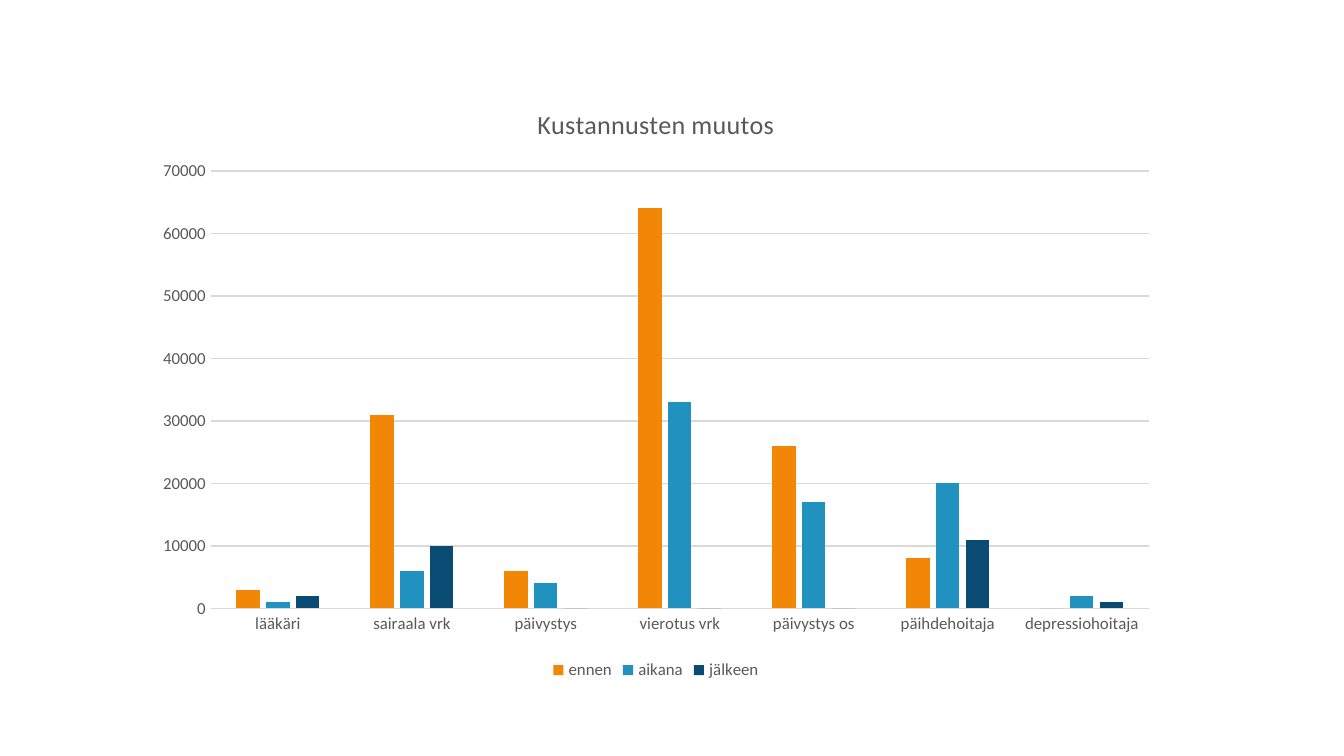
from dataclasses import dataclass
from typing import Any

from pptx import Presentation
from pptx import util as u
from pptx.chart import data as chart_data
from pptx.dml import color as dml
from pptx.enum import chart as kinds

SLIDE_W = 10
SLIDE_H = SLIDE_W * 9 / 16
COLOURS = {
    "ennen": "F28705",
    "aikana": "2192BF",
    "jälkeen": "0A4B73",
    "text": "595959",
    "rule": "D9D9D9",
}
CATEGORIES = ["lääkäri", "sairaala vrk", "päivystys", "vierotus vrk",
              "päivystys os", "päihdehoitaja", "depressiohoitaja"]


@dataclass
class Period:
    name: str
    costs: list[int]


PERIODS = [
    Period("ennen", [3000, 31000, 6000, 64000, 26000, 8000, 0]),
    Period("aikana", [1000, 6000, 4000, 33000, 17000, 20000, 2000]),
    Period("jälkeen", [2000, 10000, 0, 0, 0, 11000, 1000]),
]


def set_all(target: Any, values: dict[str, Any]) -> None:
    for name, value in values.items():
        setattr(target, name, value)


def rgb(name: str) -> dml.RGBColor:
    return dml.RGBColor.from_string(COLOURS[name])


def style_font(font: Any, size: float) -> None:
    set_all(font, {"name": "Calibri", "size": u.Pt(size), "bold": False})
    font.color.rgb = rgb("text")


def style_line(line: Any) -> None:
    line.color.rgb = rgb("rule")
    line.width = u.Pt(0.75)


def style_axis(axis: Any) -> None:
    set_all(axis, {"major_tick_mark": kinds.XL_TICK_MARK.NONE,
                   "minor_tick_mark": kinds.XL_TICK_MARK.NONE})
    style_font(axis.tick_labels.font, 9)


def add_cost_chart(page: Any) -> None:
    table = chart_data.CategoryChartData()
    table.categories = CATEGORIES
    for period in PERIODS:
        table.add_series(period.name, period.costs)
    # Place as margins on the slide
    left, top, width, height = 1.06, 0.61, 7.64, 4.49
    chart = page.shapes.add_chart(
        kinds.XL_CHART_TYPE.COLUMN_CLUSTERED,
        u.Inches(left), u.Inches(top), u.Inches(width), u.Inches(height),
        table).chart
    style_font(chart.font, 10)

    # Title
    chart.has_title = True
    para = chart.chart_title.text_frame.paragraphs[0]
    span = para.add_run()
    span.text = "Kustannusten muutos"
    style_font(span.font, 14)
    chart.chart_title.include_in_layout = False

    # Legend
    chart.has_legend = True
    set_all(chart.legend, {"position": kinds.XL_LEGEND_POSITION.BOTTOM,
                           "include_in_layout": False})
    style_font(chart.legend.font, 9)

    # Axes and gridlines
    style_axis(chart.category_axis)
    style_line(chart.category_axis.format.line)
    style_axis(chart.value_axis)
    set_all(chart.value_axis, {"minimum_scale": 0, "maximum_scale": 70000,
                               "major_unit": 10000,
                               "has_major_gridlines": True})
    chart.value_axis.format.line.fill.background()
    style_line(chart.value_axis.major_gridlines.format.line)

    # Columns
    plot = chart.plots[0]
    set_all(plot, {"gap_width": 219, "overlap": -27,
                   "vary_by_categories": False})
    for series in plot.series:
        series.format.fill.solid()
        series.format.fill.fore_color.rgb = rgb(series.name)


def main() -> None:
    deck = Presentation()
    set_all(deck, {"slide_width": u.Inches(SLIDE_W),
                   "slide_height": u.Inches(SLIDE_H)})
    page = deck.slides.add_slide(deck.slide_layouts[6])
    add_cost_chart(page)
    deck.save("out.pptx")


if __name__ == "__main__":
    main()
